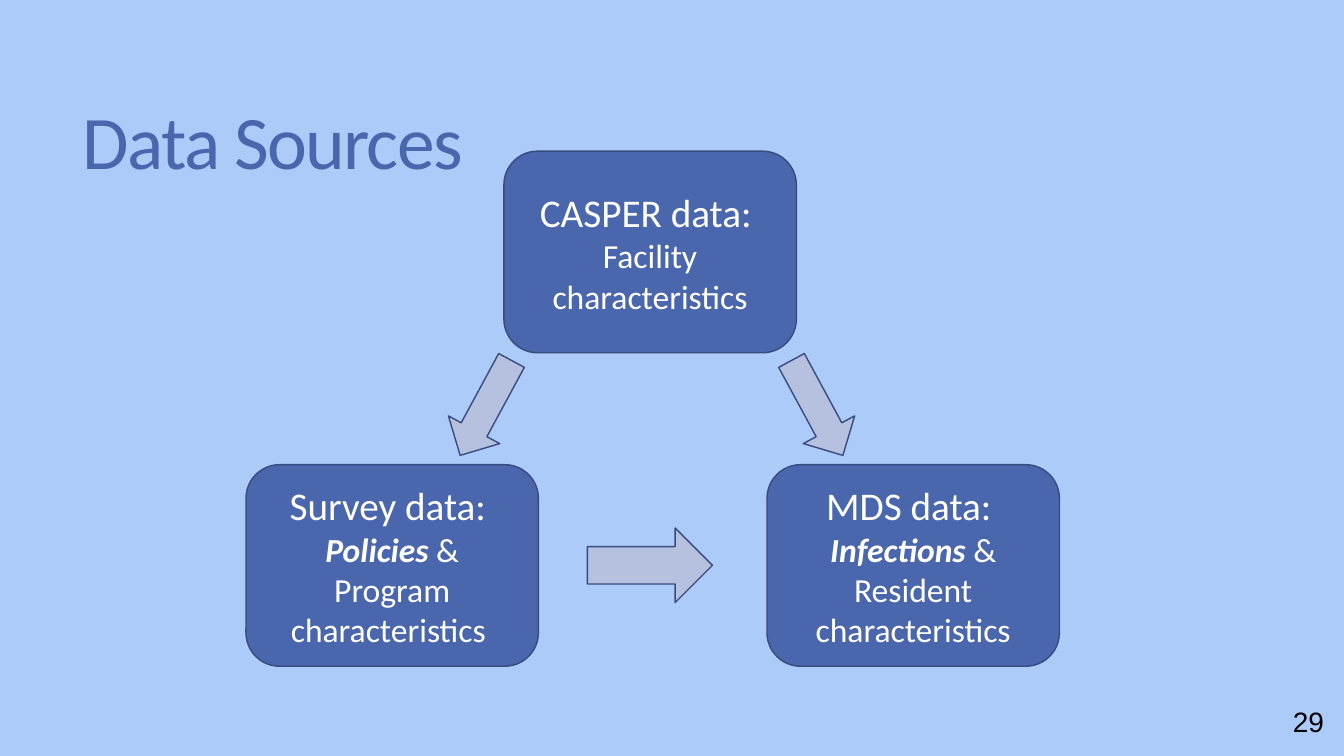
from dataclasses import dataclass

from pptx import Presentation
from pptx.dml.color import RGBColor
from pptx.enum.shapes import MSO_SHAPE
from pptx.enum.text import MSO_ANCHOR, MSO_AUTO_SIZE, PP_ALIGN
from pptx.util import Cm, Pt


@dataclass(frozen=True)
class Theme:
    back: RGBColor = RGBColor.from_string("ACCBF9")
    main: RGBColor = RGBColor.from_string("4A66AC")
    edge: RGBColor = RGBColor.from_string("374B7F")
    arrow: RGBColor = RGBColor.from_string("B5C1DF")
    light: RGBColor = RGBColor.from_string("FFFFFF")
    dark: RGBColor = RGBColor.from_string("000000")
    title: Pt = Pt(54)
    head: Pt = Pt(28)
    body: Pt = Pt(24)
    number: Pt = Pt(20)


theme = Theme()


def add_run(p, text, color, name="Calibri", **fmt):
    r = p.add_run()
    r.text = text
    r.font.color.rgb = color
    for key, value in {"name": name, **fmt}.items():
        setattr(r.font, key, value)
    return r


def add_block(kind, left, top, width, height, fill):
    sp = s.shapes.add_shape(kind, Cm(left), Cm(top), Cm(width), Cm(height))
    sp.shadow.inherit = False
    sp.fill.solid()
    sp.fill.fore_color.rgb = fill
    sp.line.color.rgb = theme.edge
    sp.line.width = Pt(1)
    return sp


# Slide and background
prs = Presentation()
prs.slide_width, prs.slide_height = Cm(33.87), Cm(19.05)
s = prs.slides.add_slide(prs.slide_layouts[5])
s.background.fill.solid()
s.background.fill.fore_color.rgb = theme.back

# Title
title = s.shapes.title
title.left, title.top, title.width, title.height = Cm(1.83), Cm(1.4), Cm(29.92), Cm(4.6)
tf = title.text_frame
tf.vertical_anchor = MSO_ANCHOR.MIDDLE
p = tf.paragraphs[0]
p.alignment = PP_ALIGN.LEFT
p.line_spacing = 0.85
r = add_run(p, "Data Sources", theme.main, size=theme.title)
r.font._element.set("spc", "-120")

# Data source boxes: left, top, heading, emphasis, detail
sources = [
    (12.7, 3.81, "CASPER data: ", "", "Facility characteristics"),
    (6.2, 11.71, "Survey data: ", "Policies", " & Program characteristics "),
    (19.33, 11.71, "MDS data: ", "Infections", " & Resident characteristics"),
]
for left, top, heading, emphasis, detail in sources:
    sp = add_block(MSO_SHAPE.ROUNDED_RECTANGLE, left, top, 7.37, 5.08, theme.main)
    tf = sp.text_frame
    tf.word_wrap = True
    tf.vertical_anchor = MSO_ANCHOR.MIDDLE
    p = tf.paragraphs[0]
    p.alignment = PP_ALIGN.CENTER
    add_run(p, heading, theme.light, size=theme.head)
    p = tf.add_paragraph()
    p.alignment = PP_ALIGN.CENTER
    if emphasis:
        add_run(p, emphasis, theme.light, size=theme.body, bold=True, italic=True)
    add_run(p, detail, theme.light, size=theme.body)

# Arrows between the boxes: left, top, width, height, rotation
arrows = [
    (15.44, 12.67, 1.88, 3.15, 270),
    (19.86, 8.92, 1.47, 2.72, 331.6),
    (11.51, 8.92, 1.47, 2.72, 28.4),
]
for *frame, rotation in arrows:
    sp = add_block(MSO_SHAPE.DOWN_ARROW, *frame, theme.arrow)
    sp.rotation = rotation

# Slide number
tb = s.shapes.add_textbox(Cm(32.33), Cm(17.63), Cm(1.3), Cm(1.12))
tf = tb.text_frame
tf.word_wrap = False
tf.auto_size = MSO_AUTO_SIZE.SHAPE_TO_FIT_TEXT
add_run(tf.paragraphs[0], "29", theme.dark, name="Arial", size=theme.number)

prs.save("out.pptx")
